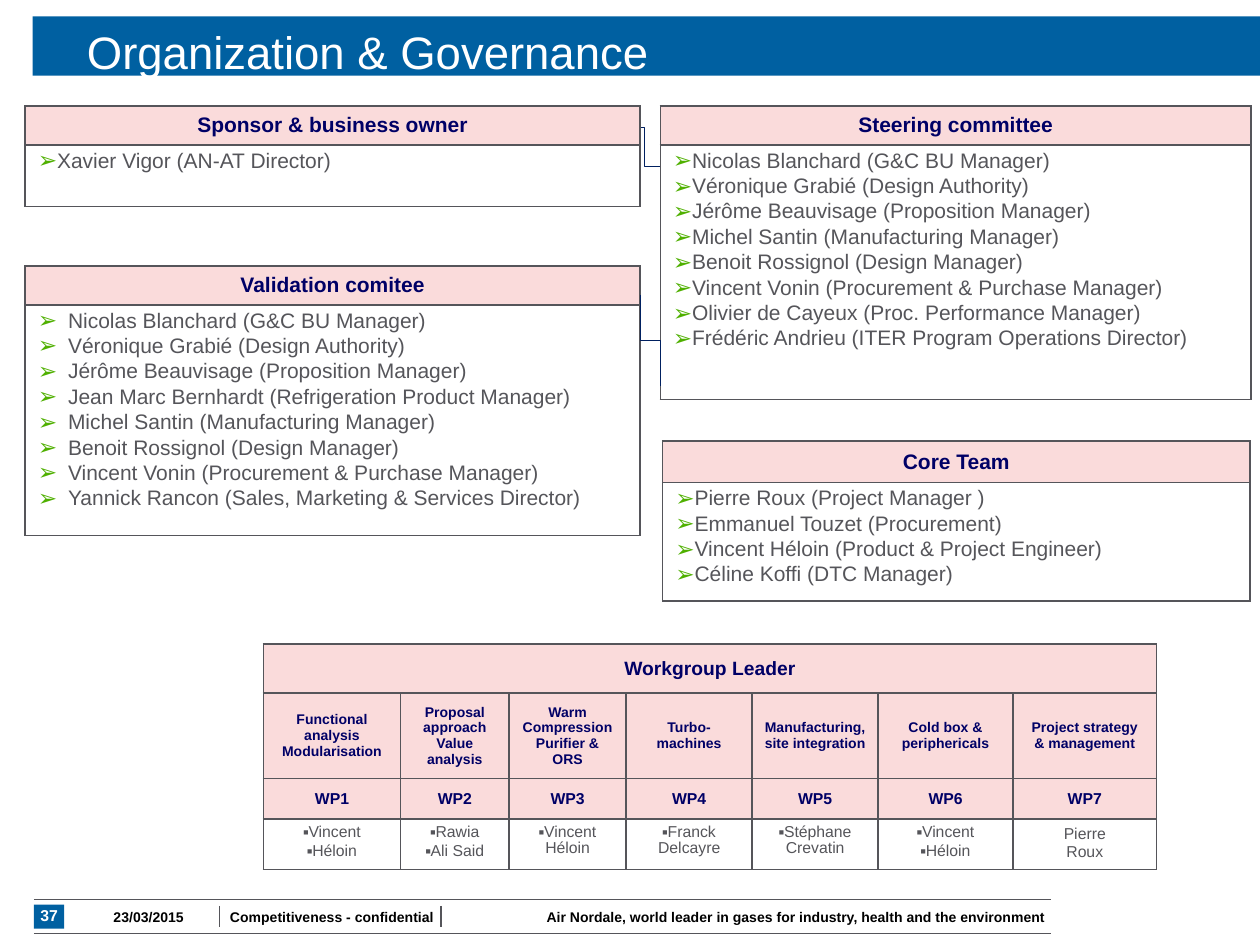
from lxml import etree
from pptx import Presentation
from pptx.dml.color import RGBColor
from pptx.enum.shapes import MSO_CONNECTOR, MSO_SHAPE
from pptx.enum.text import MSO_ANCHOR, PP_ALIGN
from pptx.oxml.ns import qn
from pptx.util import Inches, Pt

LEFT, MID, RIGHT = PP_ALIGN.LEFT, PP_ALIGN.CENTER, PP_ALIGN.RIGHT
TOP, CENTER = MSO_ANCHOR.TOP, MSO_ANCHOR.MIDDLE
LINE, ELBOW = MSO_CONNECTOR.STRAIGHT, MSO_CONNECTOR.ELBOW
RECT = MSO_SHAPE.RECTANGLE

FONT = "Arial"
BLUE, NAVY, GRAY = "0060A1", "000066", "55555A"
PINK, GREEN, WHITE, BLACK = "FADBDB", "4FB000", "FFFFFF", "000000"
LINK = "002060"

# Shared by the steering and validation committees
HEADS = ["Nicolas Blanchard (G&C BU Manager)",
         "Véronique Grabié (Design Authority)",
         "Jérôme Beauvisage (Proposition Manager)"]
MAKERS = ["Michel Santin (Manufacturing Manager)",
          "Benoit Rossignol (Design Manager)",
          "Vincent Vonin (Procurement & Purchase Manager)"]

# Title, left, top, width, row heights, text indent, members
PANELS = [
    ("Steering committee", 5.24, 0.84, 4.69, (0.31, 2.02), 0.15,
     HEADS + MAKERS + ["Olivier de Cayeux (Proc. Performance Manager)",
                       "Frédéric Andrieu (ITER Program Operations Director)"]),
    ("Validation comitee", 0.2, 2.11, 4.88, (0.31, 1.83), 0.24,
     HEADS + ["Jean Marc Bernhardt (Refrigeration Product Manager)"] + MAKERS
     + ["Yannick Rancon (Sales, Marketing & Services Director)"]),
    ("Sponsor & business owner", 0.2, 0.84, 4.88, (0.31, 0.49), 0.15,
     ["Xavier Vigor (AN-AT Director)"]),
    ("Core Team", 5.26, 3.5, 4.66, (0.33, 0.94), 0.15,
     ["Pierre Roux (Project Manager )",
      "Emmanuel Touzet (Procurement)",
      "Vincent Héloin (Product & Project Engineer)",
      "Céline Koffi (DTC Manager)"]),
]

# Column width, topic, leaders; a line feed is a break within a paragraph
GROUPS = [
    (1.09, ["Functional analysis", "Modularisation"], ["Vincent", "Héloin"]),
    (0.86, ["Proposal approach", "Value analysis"], ["Rawia", "Ali Said"]),
    (0.93, ["Warm Compression\nPurifier & ORS"], ["Vincent Héloin"]),
    (1, ["Turbo-machines"], ["Franck Delcayre"]),
    (1, ["Manufacturing,", "site integration"], ["Stéphane Crevatin"]),
    (1.07, ["Cold box & periphericals"], ["Vincent", "Héloin"]),
    (1.14, ["Project strategy & management"], ["Pierre", "Roux"]),
]


def rgb(code):
    return RGBColor.from_string(code)


def bullet(para, mark, color, size, indent):
    """Give a paragraph a coloured bullet and a hanging indent."""
    props = para._p.get_or_add_pPr()
    props.set("marL", str(Inches(indent)))
    props.set("indent", str(-Inches(indent)))
    tint = etree.SubElement(props, qn("a:buClr"))
    etree.SubElement(tint, qn("a:srgbClr"), val=color)
    etree.SubElement(props, qn("a:buSzPct"), val=str(size * 1000))
    etree.SubElement(props, qn("a:buFont"), typeface=FONT)
    etree.SubElement(props, qn("a:buChar"), char=mark)


def write(frame, lines, size, color, bold=False, align=MID, mark=None,
          tight=False):
    """Fill a text frame, one paragraph for each line."""
    for i, line in enumerate(lines):
        para = frame.paragraphs[0] if i == 0 else frame.add_paragraph()
        para.alignment = align
        if tight:
            para.line_spacing = 0.9
            if i:
                para.space_before = Pt(size * 0.2)
        if mark:
            bullet(para, *mark)
        for j, part in enumerate(line.split("\n")):
            if j:
                para.add_line_break()
            run = para.add_run()
            run.text = part
            font = run.font
            font.name, font.size, font.bold = FONT, Pt(size), bold
            font.color.rgb = rgb(color)


def box(slide, x, y, w, h):
    """Add a plain blue rectangle."""
    shape = slide.shapes.add_shape(RECT, Inches(x), Inches(y), Inches(w),
                                   Inches(h))
    shape.shadow.inherit = False
    shape.fill.solid()
    shape.fill.fore_color.rgb = rgb(BLUE)
    shape.line.fill.background()
    return shape


def strip(frame):
    """Centre a frame vertically and drop its margins."""
    frame.word_wrap = True
    frame.vertical_anchor = CENTER
    frame.margin_left = frame.margin_right = 0
    frame.margin_top = frame.margin_bottom = 0
    return frame


def label(slide, x, w, text, align):
    shape = slide.shapes.add_textbox(Inches(x), Inches(7.21), Inches(w),
                                     Inches(0.16))
    write(strip(shape.text_frame), [text], 8, BLACK, True, align, tight=True)


def wire(slide, kind, x1, y1, x2, y2, color, width):
    link = slide.shapes.add_connector(kind, Inches(x1), Inches(y1),
                                      Inches(x2), Inches(y2))
    link.line.color.rgb = rgb(color)
    link.line.width = Pt(width)
    etree.SubElement(link._element.spPr, qn("a:effectLst"))
    return link


def style(cell, fill, anchor):
    """Set the borders, fill and anchor of a cell."""
    props = cell._tc.get_or_add_tcPr()
    for side in ("lnL", "lnR", "lnT", "lnB"):
        edge = etree.SubElement(props, qn("a:" + side), w=str(Pt(1)))
        paint = etree.SubElement(edge, qn("a:solidFill"))
        etree.SubElement(paint, qn("a:srgbClr"), val=GRAY)
    cell.fill.solid()
    cell.fill.fore_color.rgb = rgb(fill)
    cell.vertical_anchor = anchor


def grid(slide, x, y, cols, rows):
    """Add a table with pink heading rows and a white last row."""
    table = slide.shapes.add_table(
        len(rows), len(cols), Inches(x), Inches(y), Inches(sum(cols)),
        Inches(sum(rows))).table
    table.first_row = table.horz_banding = False
    for col, width in zip(table.columns, cols):
        col.width = Inches(width)
    last = len(rows) - 1
    for i, height in enumerate(rows):
        table.rows[i].height = Inches(height)
        for cell in table.rows[i].cells:
            if i == last:
                style(cell, WHITE, TOP)
            else:
                style(cell, PINK, CENTER)
    return table


def panel(slide, title, x, y, w, rows, indent, names):
    table = grid(slide, x, y, [w], rows)
    write(table.cell(0, 0).text_frame, [title], 12, NAVY, True)
    write(table.cell(1, 0).text_frame, names, 12, GRAY, align=LEFT,
          mark=("➢", GREEN, 110, indent), tight=True)


def groups(slide):
    """Add the table of work packages and their leaders."""
    table = grid(slide, 2.09, 5.11, [g[0] for g in GROUPS],
                 [0.39, 0.68, 0.32, 0.38])
    table.cell(0, 0).merge(table.cell(0, len(GROUPS) - 1))
    write(table.cell(0, 0).text_frame, ["Workgroup Leader"], 11, NAVY, True)
    for i, (_, topic, names) in enumerate(GROUPS):
        write(table.cell(1, i).text_frame, topic, 8, NAVY, True)
        write(table.cell(2, i).text_frame, [f"WP{i + 1}"], 9, NAVY, True)
        listed = i < len(GROUPS) - 1
        write(table.cell(3, i).text_frame, names, 9, GRAY,
              mark=("■", GRAY, 55, 0) if listed else None, tight=listed)


def footer(slide):
    number = box(slide, 0.27, 7.18, 0.24, 0.19)
    write(strip(number.text_frame), ["37"], 9, WHITE, True, tight=True)
    for y in (7.14, 7.41):
        wire(slide, LINE, 0.27, y, 8.34, y, GRAY, 0.75)
    for x in (1.74, 3.5):
        wire(slide, LINE, x, 7.19, x, 7.36, GRAY, 0.75)
    label(slide, 0.67, 1.02, "23/03/2015", MID)
    label(slide, 1.77, 1.73, "Competitiveness - confidential", MID)
    label(slide, 3.82, 4.48, "Air Nordale, world leader in gases for "
          "industry, health and the environment", RIGHT)


def heading(slide):
    title = slide.shapes.title
    title.left, title.top = Inches(0.59), Inches(0.13)
    title.width, title.height = Inches(9), Inches(0.55)
    title.text_frame.vertical_anchor = CENTER
    write(title.text_frame, ["Organization & Governance"], 26, WHITE,
          align=LEFT)
    # The bar goes behind the title
    bar = box(slide, 0.26, 0.13, 9.74, 0.47)
    title._element.addprevious(bar._element)


def main():
    deck = Presentation()
    deck.slide_width, deck.slide_height = Inches(10), Inches(7.5)
    slide = deck.slides.add_slide(deck.slide_layouts[5])
    heading(slide)
    footer(slide)
    groups(slide)
    # Link from sponsor to steering, partly behind both panels
    wire(slide, ELBOW, 5.47, 1.32, 4.76, 1.01, LINK, 0.25)
    for item in PANELS:
        panel(slide, *item)
    # Link from steering to validation, turned a quarter to run upright
    turn = wire(slide, ELBOW, 4.8, 2.78, 5.52, 2.62, LINK, 0.25)
    turn._element.spPr.find(qn("a:xfrm")).set("rot", str(270 * 60000))
    deck.save("out.pptx")


if __name__ == "__main__":
    main()
